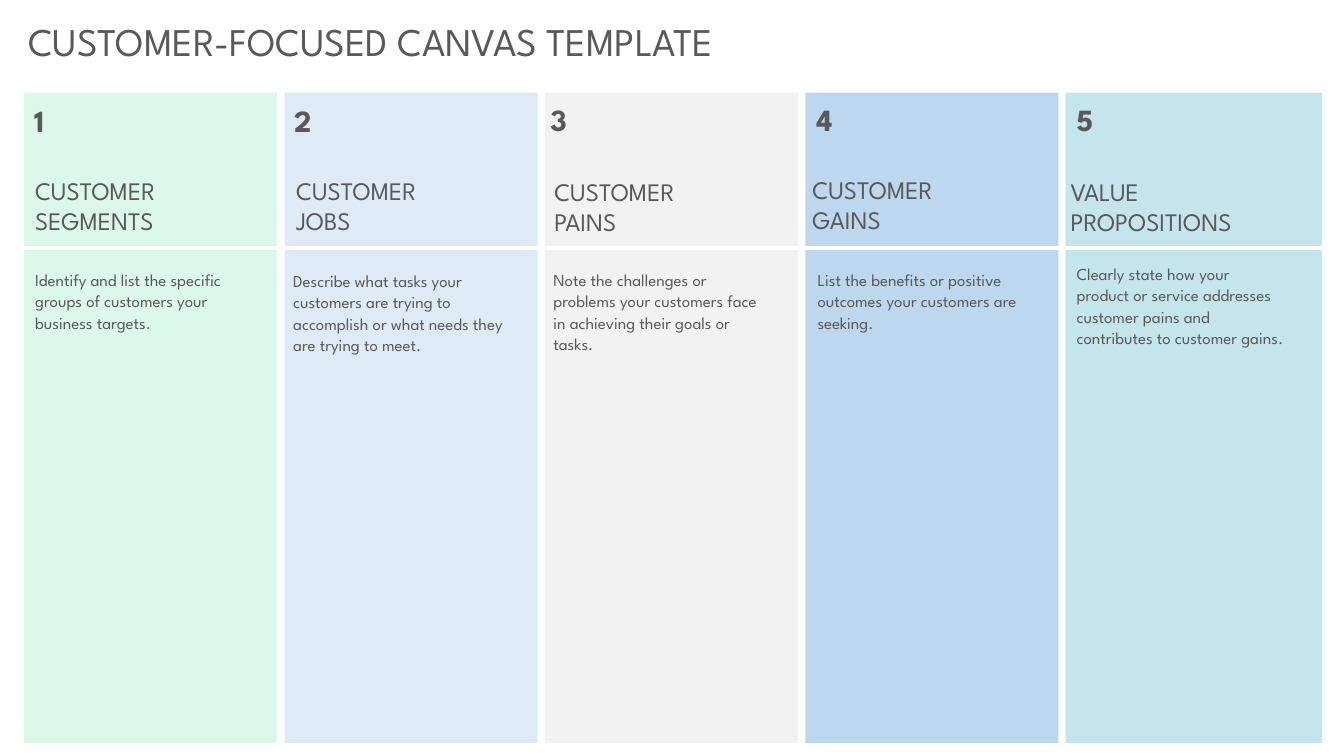
import pptx
import pptx.util
import pptx.dml.color
import pptx.enum.shapes
import pptx.enum.text
import pptx.oxml.ns
import lxml.etree

Inches = pptx.util.Inches
Pt = pptx.util.Pt

COLORS = {
    "text": "595959", "rule": "FFFFFF", "segments": "DCF8EB", "jobs": "DEEBF7",
    "pains": "F2F2F2", "gains": "BDD7EE", "value": "C5E5ED",
}
FONT = "League Spartan"
TITLE = {"size": Pt(28)}
HEADING = {"size": Pt(18)}
NUMBER = {"size": Pt(22), "bold": True}
BODY = {"size": Pt(12)}
LOOSE = {"line_spacing": 1.07, "space_after": Pt(8)}

LEFT, LAST_LEFT, TOP, HEIGHT = 0.24, 10.57, 0.92, 6.45
PITCH = (LAST_LEFT - LEFT) / 4

# Each text position is (left, top), body adds its width.
COLUMNS = [
    ("segments", 2.51, "CUSTOMER SEGMENTS", (0.25, 1.69), (0.24, 0.93), (0.25, 2.61, 2.38),
     "Identify and list the specific groups of customers your business targets."),
    ("jobs", 2.51, "CUSTOMER \vJOBS", (2.84, 1.69), (2.82, 0.93), (2.81, 2.62, 2.35),
     "Describe what tasks your customers are trying to accomplish or what needs they are trying to meet."),
    ("pains", 2.51, "CUSTOMER \vPAINS", (5.4, 1.7), (5.36, 0.92), (5.39, 2.61, 2.35),
     "Note the challenges or problems your customers face in achieving their goals or tasks."),
    ("gains", 2.51, "CUSTOMER \vGAINS", (7.96, 1.68), (8, 0.92), (8.01, 2.61, 2.38),
     "List the benefits or positive outcomes your customers are seeking."),
    ("value", 2.54, "VALUE PROPOSITIONS", (10.52, 1.7), (10.58, 0.92), (10.58, 2.55, 2.25),
     "Clearly state how your product or service addresses customer pains and contributes to customer gains."),
]


def rgb(name):
    return pptx.dml.color.RGBColor.from_string(COLORS[name])


class Canvas:
    """Draws styled elements on the current slide."""

    def __init__(self, slide):
        self.s = slide

    def fill_text(self, sp, text, font, para):
        tf = sp.text_frame
        frame = {"word_wrap": True, "auto_size": pptx.enum.text.MSO_AUTO_SIZE.NONE,
                 "vertical_anchor": pptx.enum.text.MSO_ANCHOR.TOP}
        for key, value in frame.items():
            setattr(tf, key, value)
        p = tf.paragraphs[0]
        p.text = text
        for key, value in {"alignment": pptx.enum.text.PP_ALIGN.LEFT, **para}.items():
            setattr(p, key, value)
        for r in p.runs:
            for key, value in {"name": FONT, **font}.items():
                setattr(r.font, key, value)
            r.font.color.rgb = rgb("text")

    def title(self, text, left, top, width, height):
        sp = self.s.shapes.title
        box = {"left": left, "top": top, "width": width, "height": height}
        for key, value in box.items():
            setattr(sp, key, Inches(value))
        self.fill_text(sp, text, TITLE, {})

    def text(self, text, left, top, width, height, font, para):
        sp = self.s.shapes.add_textbox(*map(Inches, (left, top, width, height)))
        self.fill_text(sp, text, font, para)

    def panel(self, left, top, width, height, color):
        sp = self.s.shapes.add_shape(pptx.enum.shapes.MSO_SHAPE.RECTANGLE,
                                     *map(Inches, (left, top, width, height)))
        sp.shadow.inherit = False
        sp.fill.solid()
        sp.fill.fore_color.rgb = rgb(color)
        sp.line.fill.background()

    def rule(self, x1, y1, x2, y2):
        sp = self.s.shapes.add_connector(pptx.enum.shapes.MSO_CONNECTOR.STRAIGHT,
                                         *map(Inches, (x1, y1, x2, y2)))
        sp.line.color.rgb = rgb("rule")
        sp.line.width = Pt(2.25)
        lxml.etree.SubElement(sp._element.spPr, pptx.oxml.ns.qn("a:effectLst"))


def main():
    prs = pptx.Presentation()
    prs.slide_width, prs.slide_height = Inches(13.33), Inches(7.5)
    canvas = Canvas(prs.slides.add_slide(prs.slide_layouts[5]))
    canvas.title("CUSTOMER-FOCUSED CANVAS TEMPLATE", 0.18, 0.12, 12.95, 0.57)
    for i, (color, width, *_) in enumerate(COLUMNS):
        canvas.panel(LEFT + i * PITCH, TOP, width, HEIGHT, color)
    canvas.rule(LEFT, 2.46, 13.2, 2.46)
    for i, (_, _, heading, heading_at, number_at, body_at, body) in enumerate(COLUMNS, 1):
        canvas.text(heading, *heading_at, 2.5, 0.71, HEADING, {})
        canvas.text(str(i), *number_at, 0.46, 0.64, NUMBER, LOOSE)
        canvas.text(body, *body_at, 1.57, BODY, LOOSE)
    prs.save("out.pptx")


if __name__ == "__main__":
    main()
